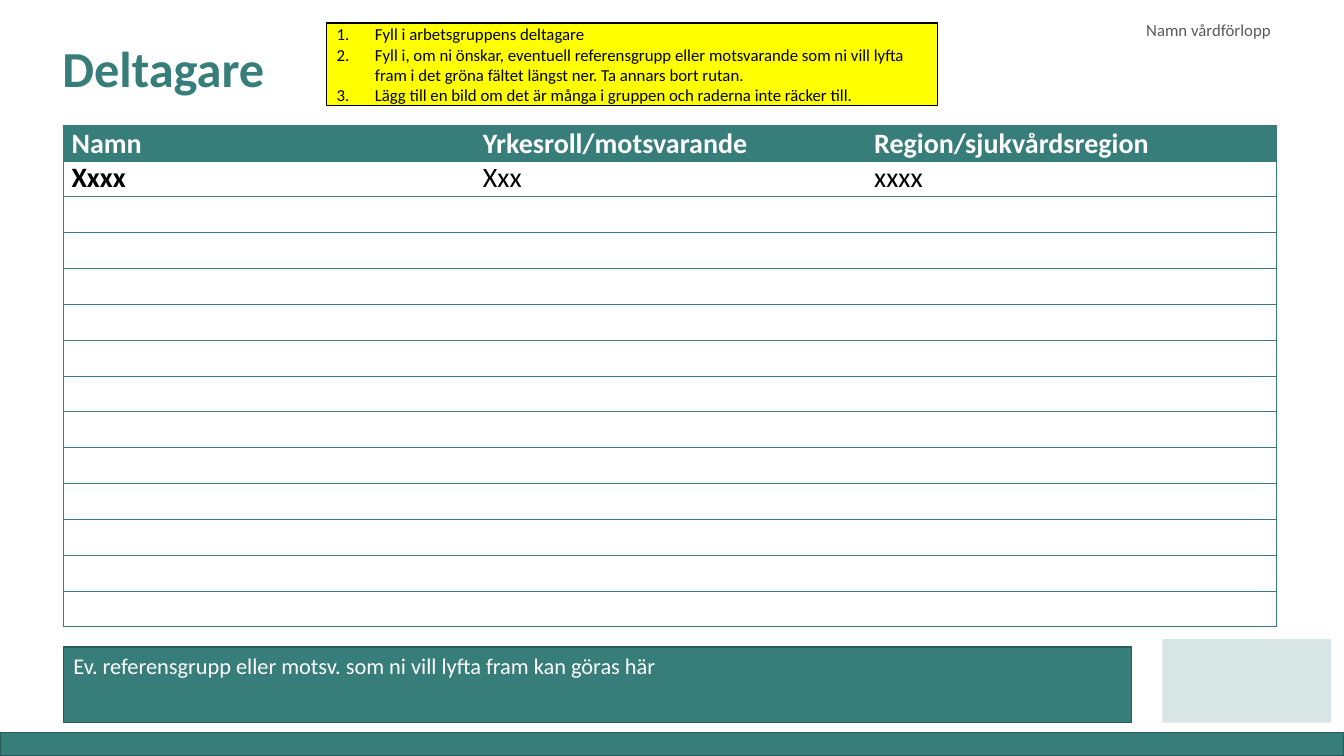
from pptx import Presentation
from pptx.dml.color import RGBColor
from pptx.enum.shapes import MSO_SHAPE
from pptx.enum.text import MSO_ANCHOR
from pptx.oxml.xmlchemy import OxmlElement
from pptx.util import Inches, Pt

COLORS = {
    "teal": "377D7A",
    "teal_edge": "295C5A",
    "yellow": "FFFF00",
    "black": "000000",
    "white": "FFFFFF",
    "grey": "595959",
    "pale": "D7E5E4",
}
FONT = "Calibri"
WIDTH, HEIGHT = 13.33, 7.5
MARGIN = 0.63
ROW_COUNT = 14
COLUMN_WIDTHS = (4.08, 3.88, 4.07)
PARTICIPANTS = (
    ("Namn", "Yrkesroll/motsvarande", "Region/sjukvårdsregion"),
    ("Xxxx", "Xxx", "xxxx"),
)
INSTRUCTIONS = (
    "Fyll i arbetsgruppens deltagare",
    "Fyll i, om ni önskar, eventuell referensgrupp eller motsvarande som ni vill lyfta "
    "fram i det gröna fältet längst ner. Ta annars bort rutan.",
    "Lägg till en bild om det är många i gruppen och raderna inte räcker till.",
)


def rgb(name):
    return RGBColor.from_string(COLORS[name])


def style(paragraph, size, color, bold=False):
    font = paragraph.font
    font.name, font.size, font.bold = FONT, Pt(size), bold
    font.color.rgb = rgb(color)


def add_panel(slide, box, fill, edge=None):
    panel = slide.shapes.add_shape(MSO_SHAPE.RECTANGLE, *map(Inches, box))
    panel.shadow.inherit = False
    panel.fill.solid()
    panel.fill.fore_color.rgb = rgb(fill)
    if edge:
        panel.line.color.rgb = rgb(edge)
        panel.line.width = Pt(1)
    else:
        panel.line.fill.background()
    return panel


def add_label(slide, box, text, size, color, bold=False):
    frame = slide.shapes.add_textbox(*map(Inches, box)).text_frame
    frame.word_wrap = True
    frame.vertical_anchor = MSO_ANCHOR.MIDDLE
    frame.text = text
    style(frame.paragraphs[0], size, color, bold)
    return frame.paragraphs[0]


def number_paragraph(paragraph, indent):
    properties = paragraph._p.get_or_add_pPr()
    properties.set("marL", str(Inches(indent)))
    properties.set("indent", str(-Inches(indent)))
    properties.set("algn", "l")
    numbering = OxmlElement("a:buAutoNum")
    numbering.set("type", "arabicPeriod")
    properties.append(numbering)


def add_instructions(slide, box):
    frame = add_panel(slide, box, "yellow", "black").text_frame
    frame.word_wrap = True
    frame.vertical_anchor = MSO_ANCHOR.MIDDLE
    frame.text = "\n".join(INSTRUCTIONS)
    for step in frame.paragraphs:
        number_paragraph(step, 0.38)
        style(step, 12, "black")


def set_borders(cell, visible_sides):
    properties = cell._tc.get_or_add_tcPr()
    for position, side in enumerate("LRTB"):
        border = OxmlElement(f"a:ln{side}")
        border.set("w", str(Pt(0.5)))
        if side in visible_sides:
            paint = OxmlElement("a:solidFill")
            color = OxmlElement("a:srgbClr")
            color.set("val", COLORS["teal"])
            paint.append(color)
        else:
            paint = OxmlElement("a:noFill")
        border.append(paint)
        properties.insert(position, border)


def add_participants(slide, box):
    table = slide.shapes.add_table(
        ROW_COUNT, len(COLUMN_WIDTHS), *map(Inches, box)
    ).table
    for column, width in zip(table.columns, COLUMN_WIDTHS):
        column.width = Inches(width)
    last_column = len(COLUMN_WIDTHS) - 1
    for row_index, row in enumerate(table.rows):
        row.height = Inches(box[3] / ROW_COUNT)
        is_header = row_index == 0
        for column_index, cell in enumerate(row.cells):
            cell.margin_left = cell.margin_right = Inches(0.08)
            cell.margin_top = cell.margin_bottom = 0
            cell.fill.solid()
            cell.fill.fore_color.rgb = rgb("teal" if is_header else "white")
            sides = "TB" + "L" * (column_index == 0) + "R" * (column_index == last_column)
            set_borders(cell, sides)
            if row_index < len(PARTICIPANTS):
                cell.text = PARTICIPANTS[row_index][column_index]
                entry = cell.text_frame.paragraphs[0]
                if is_header:
                    entry.line_spacing = 1.06
                style(entry, 20, "white" if is_header else "black",
                      is_header or column_index == 0)


def add_reference_group(slide, box):
    frame = add_panel(slide, box, "teal", "teal_edge").text_frame
    frame.word_wrap = True
    frame.vertical_anchor = MSO_ANCHOR.TOP
    frame.text = "Ev. referensgrupp eller motsv. som ni vill lyfta fram kan göras här"
    note = frame.paragraphs[0]
    note._p.get_or_add_pPr().set("algn", "l")
    style(note, 16, "white")


def add_footer(slide, box):
    left, top, width, height = box
    add_panel(slide, box, "teal", "teal_edge")
    add_panel(slide, (left + width - 1.8, top - 0.93, 1.67, 0.83), "pale")


def build_participants_slide(presentation):
    slide = presentation.slides.add_slide(presentation.slide_layouts[6])
    add_footer(slide, (0, HEIGHT - 0.23, WIDTH, 0.23))
    title = add_label(slide, (0.52, 0.3, 2.7, 0.82), "Deltagare", 36, "teal", True)
    title.line_spacing = 0.9
    add_instructions(slide, (3.24, 0.23, 6.06, 0.82))
    add_participants(slide, (MARGIN, 1.24, sum(COLUMN_WIDTHS), 4.98))
    add_reference_group(slide, (MARGIN, 6.42, 10.59, 0.75))
    add_label(slide, (11.27, 0.15, 1.7, 0.3), "Namn vårdförlopp", 12, "grey")


def main():
    presentation = Presentation()
    presentation.slide_width = Inches(WIDTH)
    presentation.slide_height = Inches(HEIGHT)
    build_participants_slide(presentation)
    presentation.save("out.pptx")


if __name__ == "__main__":
    main()
